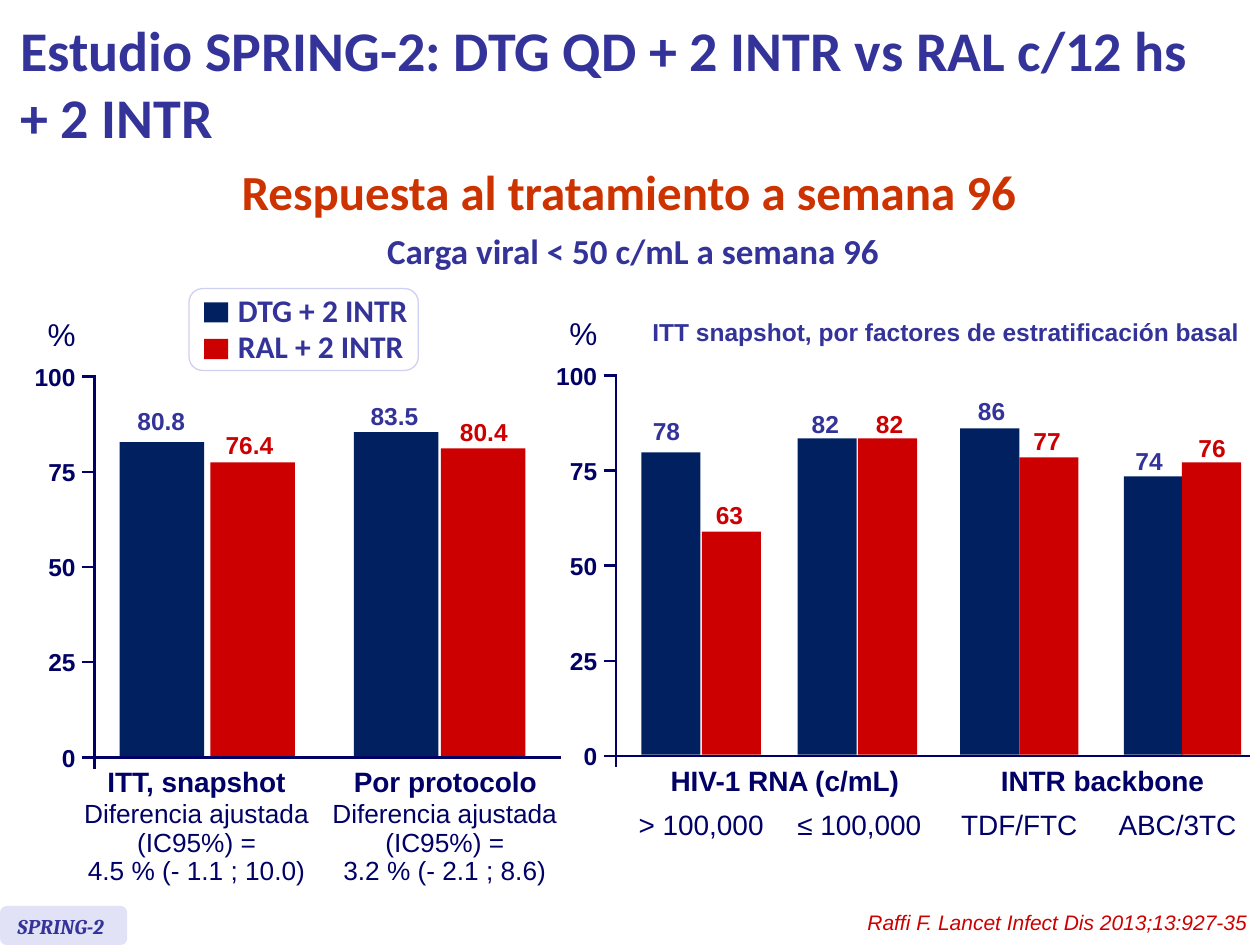
from lxml import etree
from pptx import Presentation
from pptx.dml.color import RGBColor
from pptx.enum.shapes import MSO_CONNECTOR, MSO_SHAPE
from pptx.enum.text import MSO_ANCHOR, PP_ALIGN
from pptx.oxml.ns import qn
from pptx.util import Inches, Pt


class Theme:
    indigo, navy, red = "333399", "000066", "CC0000"
    orange, bar_blue, white = "CC3300", "002060", "FFFFFF"
    border, tag = "D0D0F0", "E2E2F6"
    head, body, serif = "Calibri", "Arial", "Cambria"
    title, subtitle, caption, legend = 32, 28, 20, 18
    category, note, value, small = 16, 15, 14, 12


LEFT, CENTER, RIGHT = PP_ALIGN.LEFT, PP_ALIGN.CENTER, PP_ALIGN.RIGHT

prs = Presentation()
prs.slide_width, prs.slide_height = Inches(10), Inches(7.5)
s = prs.slides.add_slide(prs.slide_layouts[5])


def add_text(box, lines, size, color, font=Theme.body, align=CENTER, bold=False,
             italic=False, spacing=None, inset=None, wrap=False, middle=False):
    tf = s.shapes.add_textbox(*map(Inches, box)).text_frame
    tf.word_wrap = wrap
    if middle:
        tf.vertical_anchor = MSO_ANCHOR.MIDDLE
    if inset is not None:
        tf.margin_left = tf.margin_right = Inches(inset)
        tf.margin_top = tf.margin_bottom = Inches(inset)
    for i, line in enumerate(lines.split("\n")):
        p = tf.add_paragraph() if i else tf.paragraphs[0]
        p.alignment = align
        if spacing:
            p.line_spacing = spacing
        r = p.add_run()
        r.text = line
        r.font.name, r.font.size = font, Pt(size)
        r.font.bold, r.font.italic = bold, italic
        r.font.color.rgb = RGBColor.from_string(color)


def add_box(box, fill, line=None, kind=MSO_SHAPE.RECTANGLE):
    sp = s.shapes.add_shape(kind, *map(Inches, box))
    sp.shadow.inherit = False
    sp.fill.solid()
    sp.fill.fore_color.rgb = RGBColor.from_string(fill)
    if line:
        sp.line.color.rgb = RGBColor.from_string(line)
        sp.line.width = Pt(0.75)
    else:
        sp.line.fill.background()


# Title
title = s.shapes.title
title.left, title.top, title.width, title.height = map(Inches, (0.06, 0.05, 9.55, 1.21))
tf = title.text_frame
tf.word_wrap = True
tf.vertical_anchor = MSO_ANCHOR.MIDDLE
p = tf.paragraphs[0]
p.alignment = LEFT
for i, line in enumerate(("Estudio SPRING-2: DTG QD + 2 INTR vs RAL c/12 hs", "+ 2 INTR")):
    if i:
        p.add_line_break()
    r = p.add_run()
    r.text = line
    r.font.name, r.font.size, r.font.bold = Theme.head, Pt(Theme.title), True
    r.font.color.rgb = RGBColor.from_string(Theme.indigo)

# Subtitles
add_text((1.78, 1.23, 6.42, 0.57), "Respuesta al tratamiento a semana 96",
         Theme.subtitle, Theme.orange, Theme.head, bold=True)
add_text((2.72, 1.83, 4.61, 0.38), "Carga viral < 50 c/mL a semana 96", Theme.caption,
         Theme.indigo, Theme.head, bold=True, spacing=0.8, wrap=True, middle=True)
add_text((5.08, 2.47, 4.87, 0.34), "ITT snapshot, por factores de estratificación basal",
         Theme.value, Theme.indigo, align=LEFT, bold=True)

# Bar panels: axis x, baseline y, baseline end, bar width, label width, bars
# Each bar: left, top, value, value left, value top; DTG and RAL alternate
panels = [
    (0.75, 6.01, 4.45, 0.67, 0.58, [
        (0.95, 3.51, "80.8", 0.99, 3.12), (1.67, 3.67, "76.4", 1.69, 3.31),
        (2.81, 3.43, "83.5", 2.84, 3.08), (3.50, 3.56, "80.4", 3.55, 3.21)]),
    (4.89, 6.00, 9.92, 0.47, 0.42, [
        (5.09, 3.59, "78", 5.08, 3.20), (5.57, 4.22, "63", 5.58, 3.87),
        (6.33, 3.48, "82", 6.34, 3.15), (6.81, 3.48, "82", 6.85, 3.15),
        (7.62, 3.40, "86", 7.66, 3.04), (8.09, 3.63, "77", 8.10, 3.28),
        (8.92, 3.78, "74", 8.91, 3.44), (9.38, 3.67, "76", 9.41, 3.34)]),
]
AXIS_HEIGHT = 3.02
for axis, base, end, bar_w, label_w, bars in panels:
    for i, (x, y, value, label_x, label_y) in enumerate(bars):
        add_box((x, y, bar_w, base - 0.01 - y), Theme.red if i % 2 else Theme.bar_blue)
    for i, (x, y, value, label_x, label_y) in enumerate(bars):
        add_text((label_x, label_y, label_w, 0.44), value, Theme.value,
                 Theme.red if i % 2 else Theme.indigo, bold=True, inset=0.1)

    # Axes, ticks and scale
    lines = [(axis, base - AXIS_HEIGHT - 0.01, axis, base + 0.09),
             (axis - 0.1, base, end, base)]
    for tick in (0, 25, 50, 75, 100):
        y = base - AXIS_HEIGHT * tick / 100
        if tick:
            lines.append((axis - 0.1, y, axis, y))
        w = 0.11 * len(str(tick))
        add_text((axis - 0.15 - w, y - 0.12, w, 0.24), str(tick), Theme.value,
                 Theme.navy, align=RIGHT, bold=True, inset=0, middle=True)
    for ends in lines:
        c = s.shapes.add_connector(MSO_CONNECTOR.STRAIGHT, *map(Inches, ends))
        c.line.color.rgb = RGBColor.from_string(Theme.navy)
        c.line.width = Pt(1.5)
        etree.SubElement(c._element.spPr, qn("a:effectLst"))
    add_text((axis - 0.47, base - 3.56, 0.42, 0.4), "%", Theme.legend, Theme.navy, align=LEFT)

# Category headings
for x, y, w, heading in [(0.74, 6.02, 1.64, "ITT, snapshot"), (2.70, 6.02, 1.67, "Por protocolo"),
                         (5.21, 6.01, 2.04, "HIV-1 RNA (c/mL)"), (7.83, 6.01, 1.84, "INTR backbone")]:
    add_text((x, y, w, 0.37), heading, Theme.category, Theme.navy, bold=True)

# Adjusted differences
for x, result in [(0.53, "4.5 % (- 1.1 ; 10.0)"), (2.50, "3.2 % (- 2.1 ; 8.6)")]:
    add_text((x, 6.31, 2.06, 0.78), f"Diferencia ajustada\n(IC95%) =\n{result}",
             Theme.note, Theme.navy, spacing=0.9)

# Strata
for x, w, stratum in [(4.93, 1.27, "> 100,000"), (6.22, 1.20, "≤ 100,000"),
                      (7.52, 1.14, "TDF/FTC"), (8.77, 1.15, "ABC/3TC")]:
    add_text((x, 6.39, w, 0.35), stratum, Theme.category, Theme.navy, spacing=0.9)

# Legend
add_box((1.5, 2.29, 1.82, 0.65), Theme.white, Theme.border, MSO_SHAPE.ROUNDED_RECTANGLE)
for y, color, arm in [(2.40, Theme.bar_blue, "DTG + 2 INTR"), (2.69, Theme.red, "RAL + 2 INTR")]:
    add_box((1.62, y, 0.19, 0.16), color)
    add_text((1.79, y - 0.14, 1.56, 0.4), arm, Theme.legend, Theme.indigo,
             Theme.head, LEFT, bold=True)

# Footer: citation and study tag
add_text((4.7, 7.17, 5.3, 0.3), "Raffi F. Lancet Infect Dis 2013;13:927-35", Theme.small,
         Theme.red, align=RIGHT, italic=True, wrap=True)
add_box((0, 7.19, 1.01, 0.31), Theme.tag, kind=MSO_SHAPE.ROUNDED_RECTANGLE)
add_text((0.04, 7.2, 0.94, 0.3), "SPRING-2", Theme.small, Theme.indigo, Theme.serif,
         LEFT, bold=True, italic=True, wrap=True)

prs.save("out.pptx")
